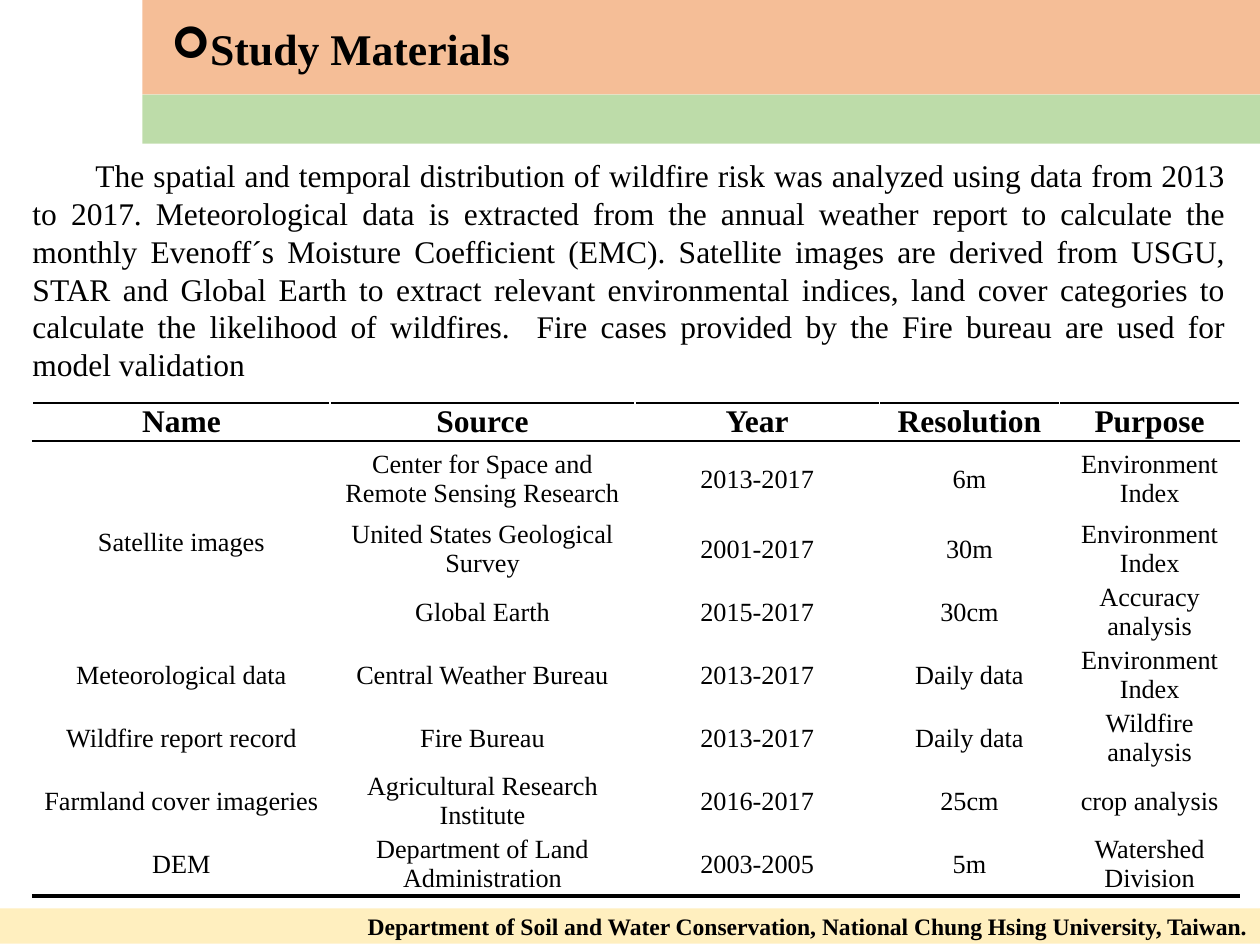
from lxml import etree
from pptx import Presentation
from pptx import util as u
from pptx.dml.color import RGBColor
from pptx.enum import shapes, text
from pptx.oxml import ns

BODY = (
    "The spatial and temporal distribution of wildfire risk was analyzed using data "
    "from 2013 to 2017. Meteorological data is extracted from the annual weather report "
    "to calculate the monthly Evenoffˊs Moisture Coefficient (EMC). Satellite images are "
    "derived from USGU, STAR and Global Earth to extract relevant environmental indices, "
    "land cover categories to calculate the likelihood of wildfires.  Fire cases provided "
    "by the Fire bureau are used for model validation"
)
FOOT = "Department of Soil and Water Conservation, National Chung Hsing University, Taiwan."
ROWS = [
    ("Name", "Source", "Year", "Resolution", "Purpose"),
    ("Satellite images", "Center for Space and Remote Sensing Research", "2013-2017", "6m",
     "Environment Index"),
    ("", "United States Geological Survey", "2001-2017", "30m", "Environment Index"),
    ("", "Global Earth", "2015-2017", "30cm", "Accuracy analysis"),
    ("Meteorological data", "Central Weather Bureau", "2013-2017", "Daily data",
     "Environment Index"),
    ("Wildfire report record", "Fire Bureau", "2013-2017", "Daily data", "Wildfire analysis"),
    ("Farmland cover imageries", "Agricultural Research Institute", "2016-2017", "25cm",
     "crop analysis"),
    ("DEM", "Department of Land Administration", "2003-2005", "5m", "Watershed Division"),
]
WIDTHS = [2.36, 2.42, 1.94, 1.43, 1.43]
HEIGHTS = [0.3, 0.61] + [0.5] * 6


def color(code):
    return RGBColor.from_string(code)


def add(node, tag, **attrs):
    return etree.SubElement(node, ns.qn(tag), attrs)


class Deck:
    """Holds the text style and the slide being built."""

    def __init__(self, slide):
        self.slide = slide
        self.face = "Times New Roman"
        self.ink = "000000"

    def style(self, para, size, bold=False, align=text.PP_ALIGN.LEFT, lead=None):
        para.alignment = align
        if lead:
            para.line_spacing = u.Pt(lead)
        for run in para.runs:
            font = run.font
            font.name, font.size, font.bold = self.face, u.Pt(size), bold
            font.color.rgb = color(self.ink)

    def band(self, left, top, width, height, fill, alpha):
        box = self.slide.shapes.add_shape(
            shapes.MSO_SHAPE.RECTANGLE, *map(u.Inches, (left, top, width, height)))
        box.shadow.inherit = False
        box.line.fill.background()
        box.fill.solid()
        box.fill.fore_color.rgb = color(fill)
        tint = box._element.spPr.find(ns.qn("a:solidFill"))[0]
        add(tint, "a:alpha", val=str(alpha * 1000))

    def title(self, words, left, top, width, height):
        box = self.slide.shapes.title
        box.left, box.top, box.width, box.height = map(u.Inches, (left, top, width, height))
        self.slide.shapes._spTree.append(box._element)
        frame = box.text_frame
        frame.text = words
        frame.vertical_anchor = text.MSO_ANCHOR.TOP
        para = frame.paragraphs[0]
        props = para._p.get_or_add_pPr()
        props.set("marL", str(u.Inches(0.23)))
        props.set("indent", str(-u.Inches(0.23)))
        add(props, "a:buFont", typeface="Wingdings")
        add(props, "a:buChar", char="➢")
        self.style(para, 25, True)

    def note(self, words, left, top, width, height, size, wrap=True, indent=0, **look):
        box = self.slide.shapes.add_textbox(*map(u.Inches, (left, top, width, height)))
        frame = box.text_frame
        frame.word_wrap = wrap
        frame.text = words
        para = frame.paragraphs[0]
        para._p.get_or_add_pPr().set("indent", str(u.Inches(indent)))
        self.style(para, size, **look)

    def rule(self, cell, side, width):
        line = add(cell._tc.get_or_add_tcPr(), side, w=str(u.Pt(width)))
        add(add(line, "a:solidFill"), "a:srgbClr", val=self.ink)

    def table(self, rows, left, top, widths, heights):
        grid = self.slide.shapes.add_table(
            len(rows), len(widths),
            *map(u.Inches, (left, top, sum(widths), sum(heights)))).table
        grid.first_row = grid.horz_banding = False
        for col, width in zip(grid.columns, widths):
            col.width = u.Inches(width)
        rules = {0: [("a:lnT", 1.5), ("a:lnB", 1)], 1: [("a:lnT", 1)],
                 len(rows) - 1: [("a:lnB", 3)]}
        for i, row in enumerate(rows):
            grid.rows[i].height = u.Inches(heights[i])
            for j, words in enumerate(row):
                cell = grid.cell(i, j)
                cell.margin_left = cell.margin_right = u.Inches(0.07)
                cell.margin_top = cell.margin_bottom = 0
                cell.vertical_anchor = text.MSO_ANCHOR.MIDDLE
                for side, width in rules.get(i, []):
                    self.rule(cell, side, width)
                cell.fill.background()
                cell.text_frame.text = words
                size, lead = (15, 16.6) if i else (18, None)
                self.style(cell.text_frame.paragraphs[0], size, i == 0,
                           text.PP_ALIGN.CENTER, lead)
        grid.cell(1, 0).merge(grid.cell(3, 0))


def main():
    show = Presentation()
    show.slide_width, show.slide_height = u.Inches(10), u.Inches(7.5)
    deck = Deck(show.slides.add_slide(show.slide_layouts[5]))
    deck.band(1.13, 0, 8.87, 0.75, "F4B183", 83)
    deck.band(1.13, 0.75, 8.87, 0.39, "A9D18E", 76)
    deck.band(0, 7.21, 10, 0.28, "FFE699", 62)
    deck.note(FOOT, 2.82, 7.19, 7.18, 0.33, 13.5, wrap=False, bold=True)
    deck.title("Study Materials", 1.26, 0.12, 7.57, 0.52)
    deck.table(ROWS, 0.26, 3.2, WIDTHS, HEIGHTS)
    deck.note(BODY, 0.16, 1.19, 9.67, 1.92, 18, indent=0.5,
              align=text.PP_ALIGN.JUSTIFY, lead=21.6)
    show.save("out.pptx")


if __name__ == "__main__":
    main()
